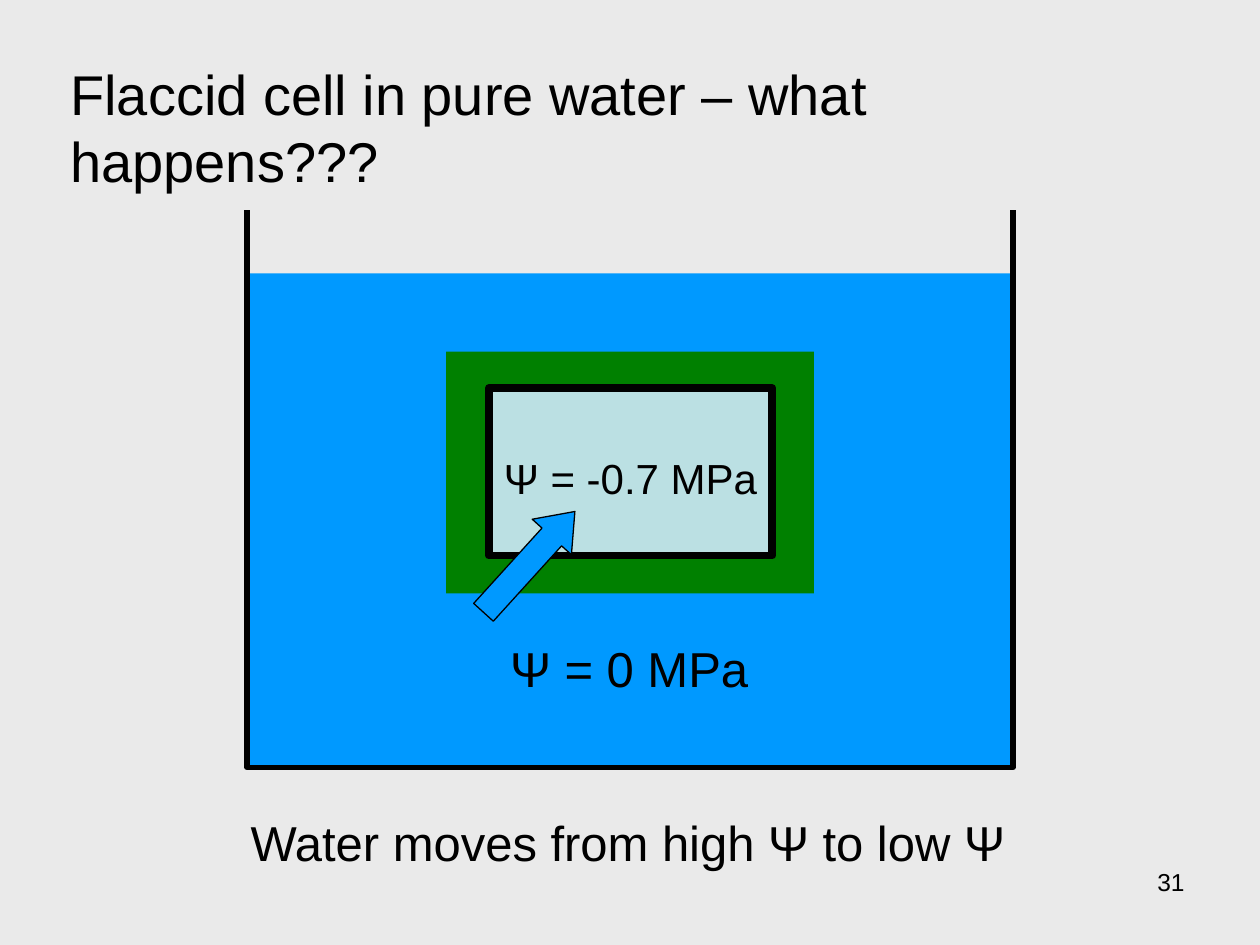
from dataclasses import dataclass

from pptx import Presentation
from pptx.dml.color import RGBColor
from pptx.enum.shapes import MSO_SHAPE
from pptx.enum.text import PP_ALIGN
from pptx.shapes.autoshape import Shape
from pptx.slide import Slide
from pptx.util import Inches, Pt

RECTANGLE = MSO_SHAPE.RECTANGLE
UP_ARROW = MSO_SHAPE.UP_ARROW
LEFT = PP_ALIGN.LEFT
RIGHT = PP_ALIGN.RIGHT

FONT = "Arial"
COLORS = {
    "background": "EAEAEA",
    "ink": "000000",
    "water": "0099FF",
    "wall": "008000",
    "cytoplasm": "BBE0E3",
}


@dataclass(frozen=True)
class Box:
    left: float
    top: float
    width: float
    height: float

    def lengths(self) -> tuple[Inches, Inches, Inches, Inches]:
        return (Inches(self.left), Inches(self.top),
                Inches(self.width), Inches(self.height))


@dataclass(frozen=True)
class Block:
    box: Box
    fill: str
    line_width: float = 0
    kind: MSO_SHAPE = RECTANGLE
    rotation: float = 0
    adjustments: tuple[float, ...] = ()


@dataclass(frozen=True)
class Label:
    text: str
    box: Box
    size: int
    alignment: PP_ALIGN = LEFT
    wrap: bool = False


BEAKER = Box(1.96, 1.67, 6.08, 4.42)
BLOCKS = [
    Block(Box(1.96, 2.17, 6.08, 3.92), "water"),
    Block(Box(3.54, 2.79, 2.92, 1.92), "wall"),
    Block(Box(3.88, 3.08, 2.25, 1.33), "cytoplasm", 4.5),
    Block(Box(3.99, 3.92, 0.42, 1.08), "water", 0.75, UP_ARROW, 42.2, (0.5, 0.65)),
]
LABELS = [
    Label("Flaccid cell in pure water – what happens???",
          Box(0.46, 0.42, 8.8, 0.63), 32, wrap=True),
    Label("Ψ = -0.7 MPa", Box(3.9, 3.54, 2.21, 0.5), 24),
    Label("Ψ = 0 MPa", Box(3.95, 5.02, 2.09, 0.57), 28),
    Label("Water moves from high Ψ to low Ψ", Box(1.89, 6.4, 6.22, 0.57), 28),
    Label("31", Box(7.17, 6.83, 2.33, 0.52), 14, RIGHT, True),
]


def color(name: str) -> RGBColor:
    return RGBColor.from_string(COLORS[name])


def style_line(shape: Shape, width: float) -> None:
    shape.shadow.inherit = False
    if width:
        shape.line.color.rgb = color("ink")
        shape.line.width = Pt(width)
    else:
        shape.line.fill.background()


def draw_block(slide: Slide, block: Block) -> None:
    shape = slide.shapes.add_shape(block.kind, *block.box.lengths())
    shape.fill.solid()
    shape.fill.fore_color.rgb = color(block.fill)
    shape.rotation = block.rotation
    for index, value in enumerate(block.adjustments):
        shape.adjustments[index] = value
    style_line(shape, block.line_width)


def draw_beaker(slide: Slide, box: Box) -> None:
    left, top, width, height = box.lengths()
    right, bottom = left + width, top + height
    builder = slide.shapes.build_freeform(left, top)
    builder.add_line_segments(
        [(left, bottom), (right, bottom), (right, top)], close=False)
    shape = builder.convert_to_shape()
    shape.fill.background()
    style_line(shape, 3)


def draw_label(slide: Slide, label: Label) -> None:
    shape = slide.shapes.add_textbox(*label.box.lengths())
    text_frame = shape.text_frame
    text_frame.word_wrap = label.wrap
    text_frame.text = label.text
    paragraph = text_frame.paragraphs[0]
    paragraph.alignment = label.alignment
    font = paragraph.runs[0].font
    font.name = FONT
    font.size = Pt(label.size)
    font.color.rgb = color("ink")


def main() -> None:
    presentation = Presentation()
    presentation.slide_width = Inches(10)
    presentation.slide_height = Inches(7.5)
    slide = presentation.slides.add_slide(presentation.slide_layouts[6])
    slide.background.fill.solid()
    slide.background.fill.fore_color.rgb = color("background")
    water, *cell_parts = BLOCKS
    draw_block(slide, water)
    draw_beaker(slide, BEAKER)
    for block in cell_parts:
        draw_block(slide, block)
    for label in LABELS:
        draw_label(slide, label)
    presentation.save("out.pptx")


if __name__ == "__main__":
    main()
